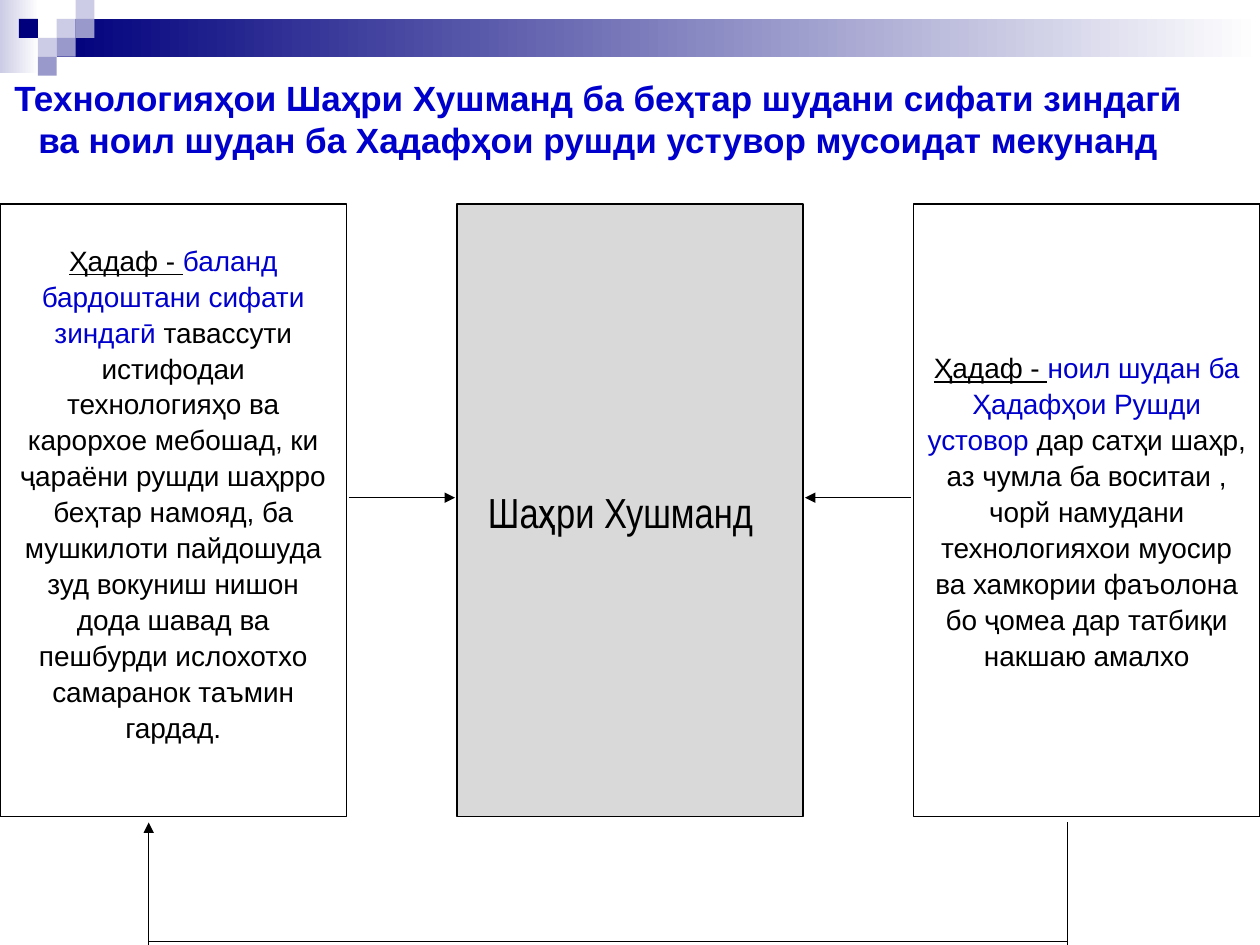
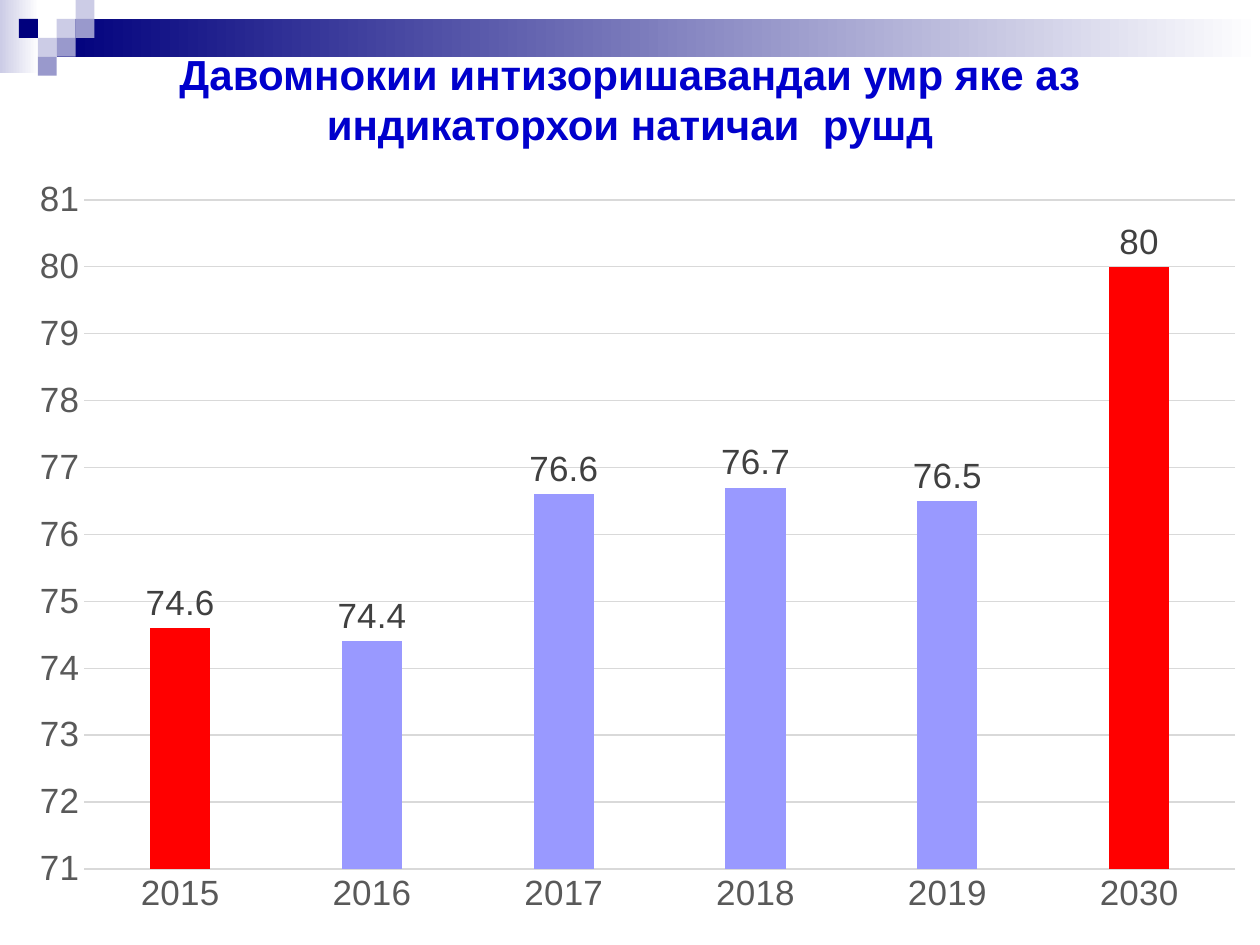
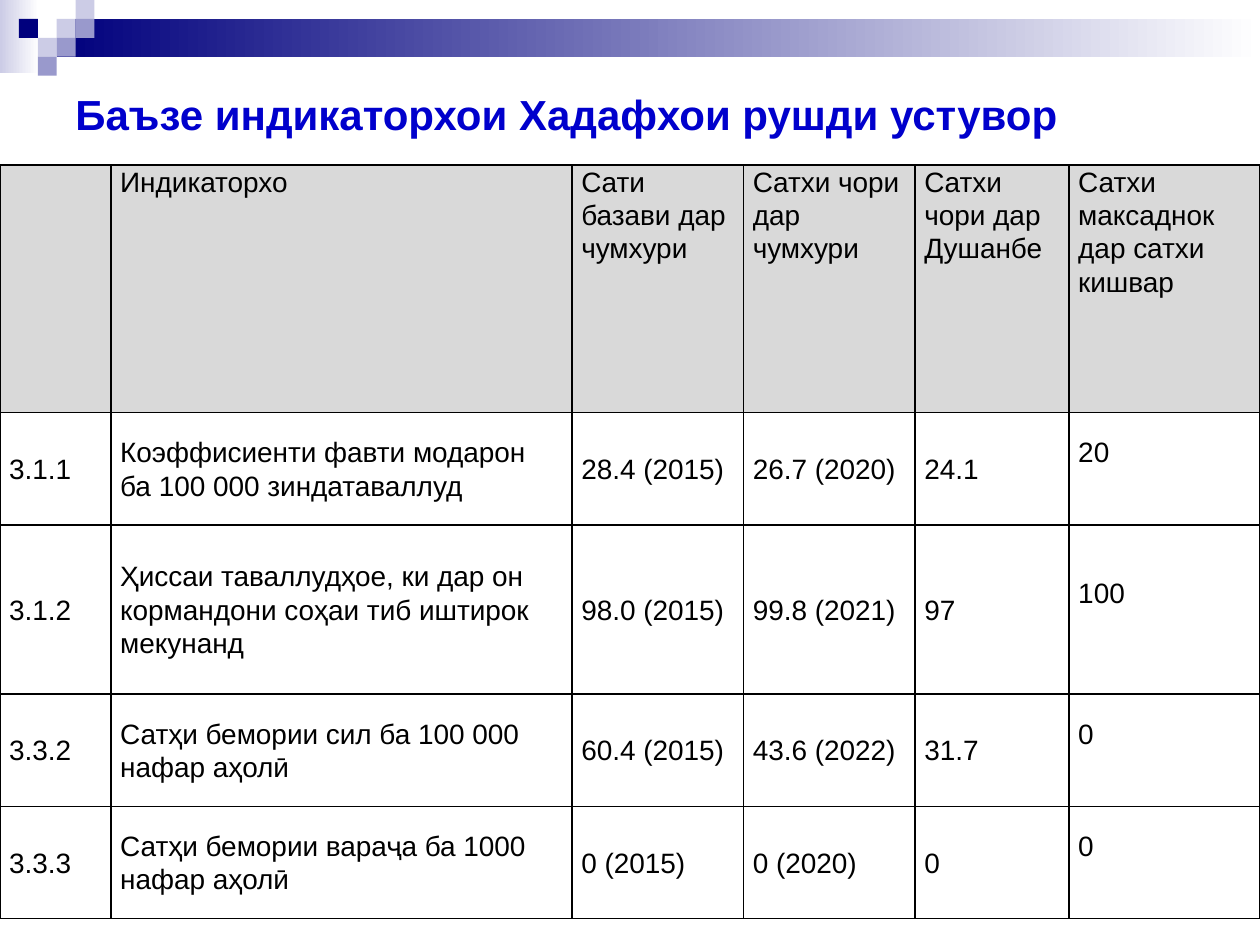
from pptx import Presentation
from pptx.chart.data import CategoryChartData
from pptx.dml.color import RGBColor
from pptx.enum.chart import XL_CHART_TYPE, XL_LABEL_POSITION, XL_TICK_MARK
from pptx.enum.shapes import MSO_CONNECTOR, MSO_SHAPE
from pptx.enum.text import MSO_ANCHOR, PP_ALIGN
from pptx.oxml.ns import qn
from pptx.oxml.xmlchemy import OxmlElement
from pptx.util import Pt

COLUMNS = XL_CHART_TYPE.COLUMN_CLUSTERED
OUTSIDE = XL_LABEL_POSITION.OUTSIDE_END
NO_TICK = XL_TICK_MARK.NONE
STRAIGHT = MSO_CONNECTOR.STRAIGHT
RECTANGLE = MSO_SHAPE.RECTANGLE
MIDDLE, TOP = MSO_ANCHOR.MIDDLE, MSO_ANCHOR.TOP
CENTER, LEFT = PP_ALIGN.CENTER, PP_ALIGN.LEFT

WIDTH, HEIGHT = 720, 540
TILE = 10.8
BLACK, WHITE, BLUE, RED = "000000", "FFFFFF", "0000CC", "FF0000"
NAVY, PALE, MID = "00007D", "CCCCE6", "9999CC"
GREY, GRID, AXIS_TEXT, LABEL_TEXT, BAR = "D9D9D9", "D9D9D9", "595959", "404040", "9999FF"
TILES = [(3, 1, PALE), (4, 0, PALE), (4, 1, MID), (2, 2, PALE),
         (1, 1, NAVY), (3, 2, MID), (2, 3, MID)]

QUALITY_GOAL = [
    ("Ҳадаф - ", {"underline": True}),
    ("баланд бардоштани сифати зиндагӣ ", {"color": BLUE}),
    ("тавассути истифодаи технологияҳо ва карорхое мебошад, ки ҷараёни рушди "
     "шаҳрро беҳтар намояд, ба мушкилоти пайдошуда зуд вокуниш нишон дода шавад "
     "ва пешбурди ислохотхо самаранок таъмин гардад.", {}),
]
DEVELOPMENT_GOAL = [
    ("Ҳадаф - ", {"underline": True}),
    ("ноил шудан ба Ҳадафҳои Рушди устовор ", {"color": BLUE}),
    ("дар сатҳи шаҳр, аз чумла ба воситаи , чорй намудани технологияхои муосир "
     "ва хамкории фаъолона бо ҷомеа дар татбиқи накшаю амалхо", {}),
]
SMART_CITY = [("Шаҳри Хушманд", {"size": 24, "font": "Arial Narrow"})]

LIFE_EXPECTANCY = {"2015": 74.6, "2016": 74.4, "2017": 76.6,
                   "2018": 76.7, "2019": 76.5, "2030": 80}
HIGHLIGHTED_YEARS = ("2015", "2030")

INDICATORS = [
    ("", "Индикаторхо", "Сати базави дар чумхури", "Сатхи чори дар чумхури",
     "Сатхи чори дар Душанбе", "Сатхи максаднок дар сатхи кишвар"),
    ("3.1.1", "Коэффисиенти фавти модарон ба 100 000 зиндатаваллуд",
     "28.4 (2015)", "26.7 (2020)", "24.1", "20"),
    ("3.1.2", "Ҳиссаи таваллудҳое, ки дар он кормандони соҳаи тиб иштирок мекунанд",
     "98.0 (2015)", "99.8 (2021)", "97", "100"),
    ("3.3.2", "Сатҳи бемории сил ба 100 000 нафар аҳолӣ",
     "60.4 (2015)", "43.6 (2022)", "31.7", "0"),
    ("3.3.3", "Сатҳи бемории вараҷа ба 1000 нафар аҳолӣ",
     "0 (2015)", "0 (2020)", "0", "0"),
]
COLUMN_WIDTHS = [63.5, 263.5, 98, 98, 88, 109]
ROW_HEIGHTS = [141.5, 64.25, 96.5, 64.25, 64.25]


def rgb(value):
    """Turn a hex string into a colour."""
    return RGBColor.from_string(value)


def style_font(font, size=16, color=BLACK, name="Arial", bold=False, underline=False):
    """Set the look of a font."""
    font.size, font.name, font.bold, font.underline = Pt(size), name, bold, underline
    font.color.rgb = rgb(color)


def write(paragraph, text, size=16, color=BLACK, font="Arial", bold=False, underline=False):
    """Add formatted text to a paragraph."""
    run = paragraph.add_run()
    run.text = text
    style_font(run.font, size, color, font, bold, underline)


def border_cell(cell):
    """Draw a thin black line on every side of a cell."""
    properties = cell._tc.get_or_add_tcPr()
    for index, side in enumerate(("a:lnL", "a:lnR", "a:lnT", "a:lnB")):
        line = OxmlElement(side)
        line.set("w", str(Pt(1)))
        paint = OxmlElement("a:solidFill")
        color = OxmlElement("a:srgbClr")
        color.set("val", BLACK)
        paint.append(color)
        line.append(paint)
        properties.insert(index, line)


class Deck:
    """Hold the shared style and the slide being filled."""

    def __init__(self):
        """Start an empty deck."""
        self.presentation = Presentation()
        self.presentation.slide_width = Pt(WIDTH)
        self.presentation.slide_height = Pt(HEIGHT)
        self.slide = None

    def start_slide(self, heading, left, width, height, size=24, align=CENTER):
        """Add a slide with the corner pattern and a heading."""
        self.slide = self.presentation.slides.add_slide(self.presentation.slide_layouts[6])
        self.fade(0, 0, 22.3, 41.8, PALE)
        self.fade(3 * TILE, TILE, WIDTH - 3 * TILE, 2 * TILE, NAVY)
        for column, row, color in TILES:
            self.rectangle(column * TILE, row * TILE, TILE, TILE, color)
        frame = self.slide.shapes.add_textbox(Pt(left), Pt(36), Pt(width), Pt(height)).text_frame
        frame.word_wrap = True
        frame.vertical_anchor = MIDDLE
        frame.paragraphs[0].alignment = align
        write(frame.paragraphs[0], heading, size=size, color=BLUE, bold=True)

    def rectangle(self, left, top, width, height, fill):
        """Add a plain rectangle without outline."""
        shape = self.slide.shapes.add_shape(RECTANGLE, Pt(left), Pt(top), Pt(width), Pt(height))
        shape.shadow.inherit = False
        shape.fill.solid()
        shape.fill.fore_color.rgb = rgb(fill)
        shape.line.fill.background()
        return shape

    def fade(self, left, top, width, height, start):
        """Add a band that fades to white on the right."""
        fill = self.rectangle(left, top, width, height, start).fill
        fill.gradient()
        fill.gradient_angle = 0
        for stop, color in zip(fill.gradient_stops, (start, WHITE)):
            stop.color.rgb = rgb(color)
        fill.gradient_stops[0].position, fill.gradient_stops[1].position = 0, 1

    def panel(self, left, fill, runs, right_inset=7.2, bottom_inset=3.6):
        """Add an outlined panel with centred text."""
        shape = self.rectangle(left, 116.6, 198, 350, fill)
        shape.line.color.rgb = rgb(BLACK)
        shape.line.width = Pt(1)
        frame = shape.text_frame
        frame.word_wrap = True
        frame.vertical_anchor = MIDDLE
        frame.margin_right, frame.margin_bottom = Pt(right_inset), Pt(bottom_inset)
        paragraph = frame.paragraphs[0]
        paragraph.alignment = CENTER
        paragraph.line_spacing = 1.07
        for text, look in runs:
            write(paragraph, text, **look)

    def line(self, x1, y1, x2, y2, arrow=False):
        """Add a thin line, with an arrowhead at its end if asked."""
        connector = self.slide.shapes.add_connector(STRAIGHT, Pt(x1), Pt(y1), Pt(x2), Pt(y2))
        connector.line.color.rgb = rgb(BLACK)
        connector.line.width = Pt(0.5)
        properties = connector._element.spPr
        if arrow:
            tip = OxmlElement("a:tailEnd")
            tip.set("type", "triangle")
            properties.find(qn("a:ln")).append(tip)
        properties.append(OxmlElement("a:effectLst"))

    def column_chart(self, values, highlighted):
        """Add a column chart with some categories highlighted."""
        data = CategoryChartData()
        data.categories = list(values)
        data.add_series("Series 1", list(values.values()))
        chart = self.slide.shapes.add_chart(
            COLUMNS, Pt(8.6), Pt(94.3), Pt(711.4), Pt(436.3), data).chart
        chart.has_legend = chart.has_title = False
        style_font(chart.font, 20)
        for axis in (chart.category_axis, chart.value_axis):
            axis.major_tick_mark = axis.minor_tick_mark = NO_TICK
            style_font(axis.tick_labels.font, 20, AXIS_TEXT)
        scale = chart.value_axis
        scale.minimum_scale, scale.maximum_scale, scale.major_unit = 71, 81, 1
        scale.format.line.fill.background()
        for rule in (chart.category_axis.format.line, scale.major_gridlines.format.line):
            rule.color.rgb = rgb(GRID)
            rule.width = Pt(0.75)
        plot = chart.plots[0]
        plot.gap_width, plot.overlap, plot.vary_by_categories = 219, -27, False
        series = plot.series[0]
        series.invert_if_negative = False
        series.format.fill.solid()
        series.format.fill.fore_color.rgb = rgb(BAR)
        for index, category in enumerate(values):
            if category in highlighted:
                fill = series.points[index].format.fill
                fill.solid()
                fill.fore_color.rgb = rgb(RED)
        labels = series.data_labels
        labels.show_value = True
        labels.position = OUTSIDE
        style_font(labels.font, 20, LABEL_TEXT)

    def table(self, rows, widths, heights):
        """Add a bordered table with a grey heading row."""
        table = self.slide.shapes.add_table(
            len(rows), len(widths), 0, Pt(94.3), Pt(sum(widths)), Pt(sum(heights))).table
        table.first_row = table.horz_banding = False
        for column, width in zip(table.columns, widths):
            column.width = Pt(width)
        for row, height in zip(table.rows, heights):
            row.height = Pt(height)
        for r, texts in enumerate(rows):
            for c, text in enumerate(texts):
                cell = table.cell(r, c)
                is_target = r > 0 and c == len(widths) - 1
                cell.margin_left = cell.margin_right = Pt(5.2)
                cell.margin_top, cell.margin_bottom = 0, Pt(19 if is_target else 0)
                cell.vertical_anchor = MIDDLE if r else TOP
                cell.fill.solid()
                cell.fill.fore_color.rgb = rgb(WHITE if r else GREY)
                border_cell(cell)
                if text:
                    paragraph = cell.text_frame.paragraphs[0]
                    paragraph.line_spacing = 1.07
                    write(paragraph, text)


def main():
    """Build the three slides and save them."""
    deck = Deck()

    deck.start_slide("Технологияҳои Шаҳри Хушманд ба беҳтар шудани сифати зиндагӣ "
                     "ва ноил шудан ба Хадафҳои рушди устувор мусоидат мекунанд",
                     0, 684, 64, size=20)
    deck.panel(0, WHITE, QUALITY_GOAL, bottom_inset=24)
    deck.panel(261, GREY, SMART_CITY, right_inset=18)
    deck.panel(522, WHITE, DEVELOPMENT_GOAL)
    deck.line(199.4, 284.4, 260, 284.4, arrow=True)
    deck.line(520.6, 284.4, 460, 284.4, arrow=True)
    deck.line(85, 537.8, 610, 537.8)
    deck.line(610, 470, 610, HEIGHT)
    deck.line(85, HEIGHT, 85, 470, arrow=True)

    deck.start_slide("Давомнокии интизоришавандаи умр яке аз индикаторхои натичаи  рушд",
                     36, 648, 41)
    deck.column_chart(LIFE_EXPECTANCY, HIGHLIGHTED_YEARS)

    deck.start_slide("Баъзе индикаторхои Хадафхои рушди устувор", 36, 648, 58.3, align=LEFT)
    deck.table(INDICATORS, COLUMN_WIDTHS, ROW_HEIGHTS)

    deck.presentation.save("out.pptx")


if __name__ == "__main__":
    main()
